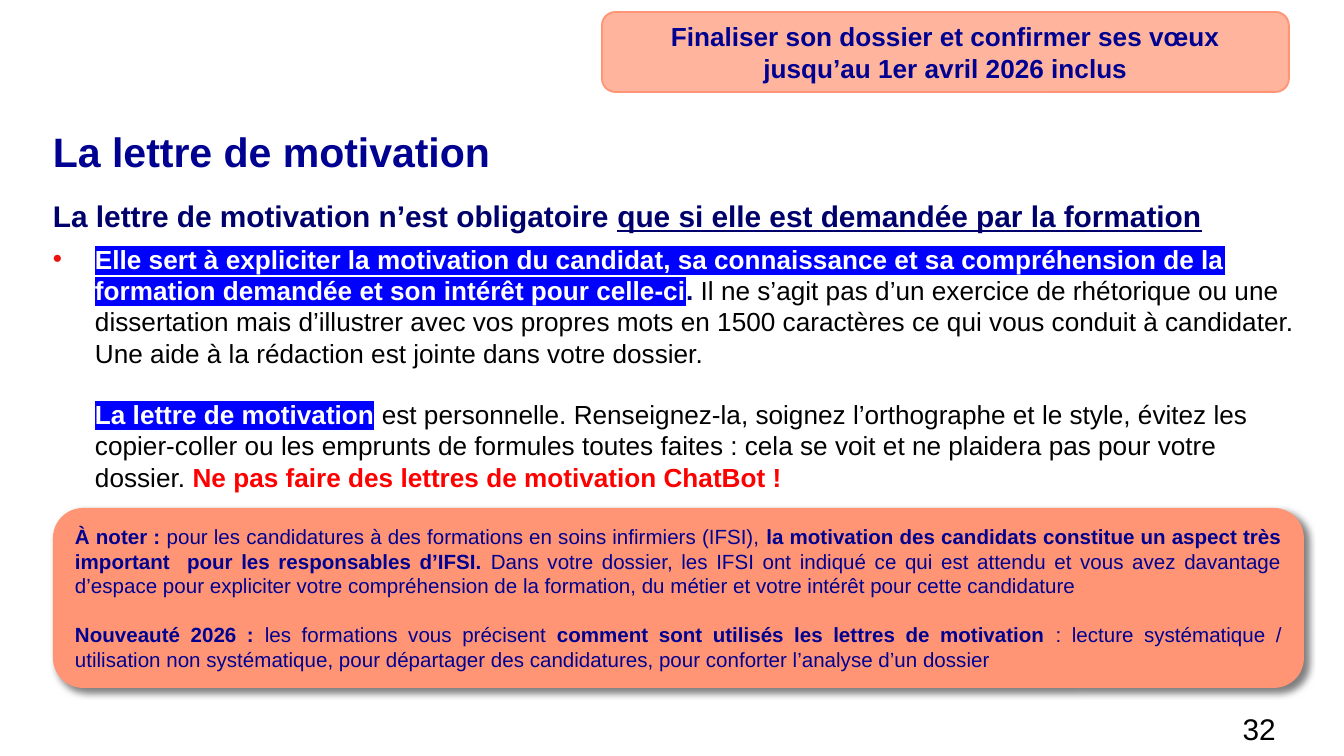
from lxml import etree
from pptx import Presentation
from pptx.dml.color import RGBColor
from pptx.enum.shapes import MSO_SHAPE
from pptx.enum.text import MSO_ANCHOR, PP_ALIGN
from pptx.oxml.ns import qn
from pptx.util import Pt

ROUND = MSO_SHAPE.ROUNDED_RECTANGLE
TOP, MIDDLE = MSO_ANCHOR.TOP, MSO_ANCHOR.MIDDLE
LEFT, CENTER = PP_ALIGN.LEFT, PP_ALIGN.CENTER
RIGHT, JUSTIFY = PP_ALIGN.RIGHT, PP_ALIGN.JUSTIFY

PX = 6804  # EMU in one px
C = {"navy": "000091", "dark": "00006D", "black": "000000", "white": "FFFFFF",
     "red": "FF0000", "bullet": "EC130E", "mark": "0000FF", "salmon": "FF9575"}


def sub(parent, tag, **attrs):
    """Append a DrawingML child element with the given attributes."""
    return etree.SubElement(parent, qn("a:" + tag), attrs)


def write(s, paragraphs, anchor=TOP, margin=None):
    """Fill a shape with paragraphs: (format values, [(text, size, colour, flags)]).

    Flags: b bold, u underlined, h highlighted.
    """
    tf = s.text_frame
    tf.word_wrap = True
    tf.vertical_anchor = anchor
    if margin is not None:
        for side in ("left", "top", "right", "bottom"):
            setattr(tf, "margin_" + side, margin)
    for i, (fmt, runs) in enumerate(paragraphs):
        p = tf.add_paragraph() if i else tf.paragraphs[0]
        for name, value in fmt.items():
            setattr(p, name, value)
        for text, size, color, flags in runs:
            r = p.add_run()
            r.text = text
            font = {"name": "Arial", "size": Pt(size), "bold": "b" in flags,
                    "underline": "u" in flags}
            for name, value in font.items():
                setattr(r.font, name, value)
            r.font.color.rgb = RGBColor.from_string(C[color])
            if "h" in flags:
                mark = etree.Element(qn("a:highlight"))
                sub(mark, "srgbClr", val=C["mark"])
                r.font._element.find(qn("a:solidFill")).addnext(mark)
    return tf


prs = Presentation()
prs.slide_width, prs.slide_height = 1344 * PX, 756 * PX
slide = prs.slides.add_slide(prs.slide_layouts[6])
shapes = slide.shapes

# Page number
s = shapes.add_textbox(1117 * PX, 703 * PX, 172 * PX, 52 * PX)
write(s, [({"alignment": RIGHT}, [("32", 16, "black", "")])], MIDDLE)

# Title
s = shapes.add_textbox(53 * PX, 132 * PX, 1238 * PX, 106 * PX)
write(s, [({"line_spacing": 0.9},
           [("La lettre de motivation", 22, "navy", "b")])], margin=0)

# Body
s = shapes.add_textbox(53 * PX, 198 * PX, 1251 * PX, 476 * PX)
tf = write(s, [
    ({"space_after": Pt(5)}, [
        ("La lettre de motivation n’est obligatoire ", 16, "dark", "b"),
        ("que si elle est demandée par la formation", 16, "dark", "bu")]),
    ({"space_after": Pt(16)}, [
        ("Elle sert à expliciter la motivation du candidat, sa connaissance et sa "
         "compréhension de la formation demandée et son intérêt pour celle-ci",
         14, "white", "bh"),
        (". ", 14, "dark", "b"),
        ("Il ne s’agit pas d’un exercice de rhétorique ou une dissertation mais "
         "d’illustrer avec vos propres mots en 1500 caractères ce qui vous conduit à "
         "candidater. Une aide à la rédaction est jointe dans votre dossier.",
         14, "black", "")]),
    ({}, [
        ("La lettre de motivation", 14, "white", "bh"),
        (" est personnelle. Renseignez-la, soignez l’orthographe et le style, évitez "
         "les copier-coller ou les emprunts de formules toutes faites : cela se voit "
         "et ne plaidera pas pour votre dossier. ", 14, "black", ""),
        ("Ne pas faire des lettres de motivation ChatBot !", 14, "red", "b")]),
], margin=0)
indent = 42 * PX
for p, first in zip(tf.paragraphs[1:], (-indent, 0)):
    pPr = p._p.get_or_add_pPr()
    pPr.set("marL", str(indent))
    pPr.set("indent", str(first))
    if first:
        sub(sub(pPr, "buClr"), "srgbClr", val=C["bullet"])
        sub(pPr, "buFont", typeface="Arial")
        sub(pPr, "buChar", char="•")

# Note and header boxes
note = [
    ({"alignment": JUSTIFY}, [
        ("À noter : ", 11, "navy", "b"),
        ("pour les candidatures à des formations en soins infirmiers (IFSI), ",
         11, "navy", ""),
        ("la motivation des candidats constitue un aspect très important  pour les "
         "responsables d’IFSI.", 11, "navy", "b"),
        (" Dans votre dossier, les IFSI ont indiqué ce qui est attendu et vous avez "
         "davantage d’espace pour expliciter votre compréhension de la formation, du "
         "métier et votre intérêt pour cette candidature", 11, "navy", "")]),
    ({"alignment": JUSTIFY, "space_before": Pt(13)}, [
        ("Nouveauté 2026 : ", 11, "navy", "b"),
        ("les formations vous précisent ", 11, "navy", ""),
        ("comment sont utilisés les lettres de motivation ", 11, "navy", "b"),
        (": lecture systématique / utilisation non systématique, pour départager des "
         "candidatures, pour conforter l’analyse d’un dossier", 11, "navy", "")]),
]
header = [({"alignment": CENTER}, [
    ("Finaliser son dossier et confirmer ses vœux jusqu’au 1er avril 2026 inclus",
     14, "navy", "b")])]
boxes = []
for x, y, w, h, paragraphs in ((53, 508, 1251, 180, note), (602, 12, 687, 80, header)):
    s = shapes.add_shape(ROUND, x * PX, y * PX, w * PX, h * PX)
    s.shadow.inherit = False
    s.fill.solid()
    s.fill.fore_color.rgb = RGBColor.from_string(C["salmon"])
    write(s, paragraphs, MIDDLE)
    boxes.append(s)
note_box, header_box = boxes

note_box.line.fill.background()
effects = note_box._element.spPr.find(qn("a:effectLst"))
shadow = sub(effects, "outerShdw", blurRad=str(Pt(4)), dist=str(Pt(3)),
             dir="2700000", algn="tl", rotWithShape="0")
sub(sub(shadow, "srgbClr", val=C["black"]), "alpha", val="50000")

header_box.line.color.rgb = RGBColor.from_string(C["salmon"])
header_box.line.width = Pt(1)
fill = header_box._element.spPr.find(qn("a:solidFill"))
sub(fill[0], "alpha", val="70000")

prs.save("out.pptx")
